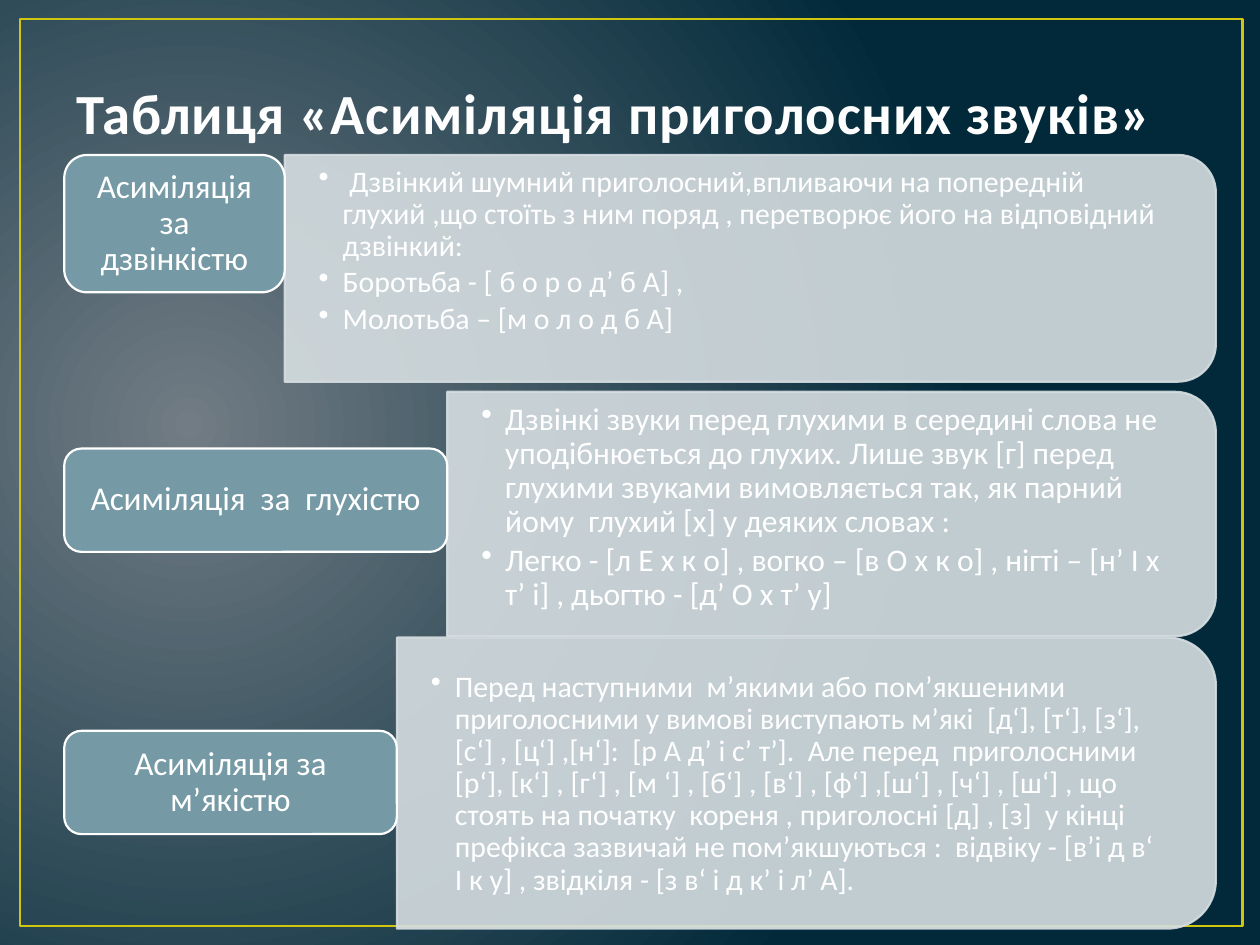
from dataclasses import dataclass

from lxml import etree
from pptx import Presentation
from pptx.dml.color import RGBColor
from pptx.enum.shapes import MSO_SHAPE
from pptx.enum.text import MSO_ANCHOR, PP_ALIGN
from pptx.oxml.ns import qn
from pptx.util import Inches, Pt

RECTANGLE = MSO_SHAPE.RECTANGLE
ROUNDED = MSO_SHAPE.ROUNDED_RECTANGLE
ROUND_TOP = MSO_SHAPE.ROUND_2_SAME_RECTANGLE
TOP, MIDDLE, BOTTOM = MSO_ANCHOR.TOP, MSO_ANCHOR.MIDDLE, MSO_ANCHOR.BOTTOM
LEFT, CENTER = PP_ALIGN.LEFT, PP_ALIGN.CENTER


@dataclass(frozen=True)
class Theme:
    font: str = "Calibri"
    glow: str = "717C84"
    night: str = "01293A"
    frame: str = "CFC60D"
    title: str = "FEFEFE"
    panel: str = "D6DEE1"
    label: str = "759AA5"
    white: str = "FFFFFF"
    title_size: float = 32.4
    label_size: float = 19
    panel_opacity: int = 90


THEME = Theme()


def write_text(shape, paragraphs, *, size, color, bold=False, align=LEFT, anchor=MIDDLE,
               margins=(0.1, 0.05), line_spacing=1, bullet=False, tracking=0):
    """Fill a shape with paragraphs; margins are (sides, top and bottom) in inches."""
    frame = shape.text_frame
    frame.word_wrap = True
    frame.vertical_anchor = anchor
    frame.margin_left = frame.margin_right = Inches(margins[0])
    frame.margin_top = frame.margin_bottom = Inches(margins[1])
    for index, text in enumerate(paragraphs):
        paragraph = frame.add_paragraph() if index else frame.paragraphs[0]
        paragraph.alignment = align
        paragraph.line_spacing = line_spacing
        paragraph.space_before = Pt(0)
        if bullet:
            paragraph.space_after = Pt(round(size * 0.15, 2))
            properties = paragraph._p.get_or_add_pPr()
            properties.set("marL", str(Inches(0.19)))
            properties.set("indent", str(-Inches(0.19)))
            etree.SubElement(properties, qn("a:buChar"), char="•")
        run = paragraph.add_run()
        run.text = text
        run.font.name = THEME.font
        run.font.size = Pt(size)
        run.font.bold = bold
        run.font.color.rgb = RGBColor.from_string(color)
        if tracking:
            run._r.get_or_add_rPr().set("spc", str(int(tracking * 100)))


def add_box(kind, left, top, width, height, *, fill=None, line, line_width=1.25, opacity=100):
    """Add a preset shape placed in inches."""
    shape = slide.shapes.add_shape(kind, Inches(left), Inches(top), Inches(width), Inches(height))
    shape.shadow.inherit = False
    shape.line.color.rgb = RGBColor.from_string(line)
    shape.line.width = Pt(line_width)
    if fill:
        shape.fill.solid()
        shape.fill.fore_color.rgb = RGBColor.from_string(fill)
    else:
        shape.fill.background()
    if opacity < 100:
        for color in shape._element.spPr.iter(qn("a:srgbClr")):
            etree.SubElement(color, qn("a:alpha"), val=str(opacity * 1000))
    return shape


presentation = Presentation()
presentation.slide_width = Inches(10)
presentation.slide_height = Inches(7.5)
slide = presentation.slides.add_slide(presentation.slide_layouts[5])

# Background: radial gradient with its centre at the left
background = slide.background.fill
background.gradient()
for stop, color in zip(background.gradient_stops, (THEME.glow, THEME.night)):
    stop.color.rgb = RGBColor.from_string(color)
for position, stop in enumerate(background.gradient_stops):
    stop.position = position
gradient = slide._element.find(".//" + qn("a:gradFill"))
gradient.remove(gradient.find(qn("a:lin")))
radial = etree.SubElement(gradient, qn("a:path"), path="circle")
etree.SubElement(radial, qn("a:fillToRect"), l="15000", t="50000", r="85000", b="60000")

# Frame
add_box(RECTANGLE, 0.16, 0.15, 9.7, 7.2, line=THEME.frame, line_width=1.5)

# Title
title = slide.shapes.title
title.left, title.top, title.width, title.height = (
    Inches(value) for value in (0.51, -0.04, 9, 1.25))
write_text(title, ["Таблиця «Асиміляція приголосних звуків»"], size=THEME.title_size,
           color=THEME.title, bold=True, anchor=BOTTOM, tracking=0.5)

# Rows: label (text, top, height), panel (left, top, height), text top, text size, points
ROWS = [
    (("Асиміляція за дзвінкістю", 1.23, 1.09), (2.26, 1.23, 1.8), 1.32, 17, [
        " Дзвінкий шумний приголосний,впливаючи на попередній глухий ,що стоїть з ним "
        "поряд , перетворює його на відповідний дзвінкий:",
        "Боротьба - [ б о р о д’ б А] ,",
        "Молотьба – [м о л о д б А]",
    ]),
    (("Асиміляція  за  глухістю", 3.56, 0.82), (3.55, 3.11, 1.94), 3.2, 18, [
        "Дзвінкі звуки перед глухими в середині слова не уподібнюється до глухих. Лише "
        "звук [г] перед глухими звуками вимовляється так, як парний йому  глухий [х] у "
        "деяких словах :",
        "Легко - [л Е х к о] , вогко – [в О х к о] , нігті – [н’ І х т’ і] , "
        "дьогтю - [д’ О х т’ у]",
    ]),
    (("Асиміляція за м’якістю", 5.8, 0.82), (3.15, 5.06, 2.31), 5.33, 17, [
        "Перед наступними  м’якими або пом’якшеними приголосними у вимові виступають "
        "м’які  [д‘], [т‘], [з‘],[с‘] , [ц‘] ,[н‘]:  [р А д’ і с’ т’].  Але перед  "
        "приголосними  [р‘], [к‘] , [г‘] , [м ‘] , [б‘] , [в‘] , [ф‘] ,[ш‘] , [ч‘] , "
        "[ш‘] , що стоять на початку  кореня , приголосні [д] , [з]  у кінці префікса "
        "зазвичай не пом’якшуються :  відвіку - [в’і д в‘ І к у] , "
        "звідкіля - [з в‘ і д к’ і л’ А].",
    ]),
]
LABEL_LEFT, PANEL_RIGHT = 0.51, 9.65

for label, panel, text_top, text_size, points in ROWS:
    label_text, label_top, label_height = label
    panel_left, panel_top, panel_height = panel
    panel_width = PANEL_RIGHT - panel_left

    # Panel: a quarter turn brings its rounded top to the right side
    shift = (panel_width - panel_height) / 2
    panel_shape = add_box(ROUND_TOP, panel_left + shift, panel_top - shift, panel_height,
                          panel_width, fill=THEME.panel, line=THEME.panel,
                          opacity=THEME.panel_opacity)
    panel_shape.rotation = 90

    # Panel text, kept clear of the rounded corners
    text_box = slide.shapes.add_textbox(
        Inches(panel_left), Inches(text_top), Inches(panel_width - panel_height * 0.05),
        Inches(panel_top + panel_height - text_top))
    write_text(text_box, points, size=text_size, color=THEME.white, anchor=TOP,
               margins=(0.27, 0), line_spacing=0.9, bullet=True)

    # Label
    label_shape = add_box(ROUNDED, LABEL_LEFT, label_top, panel_left - LABEL_LEFT,
                          label_height, fill=THEME.label, line=THEME.white)
    write_text(label_shape, [label_text], size=THEME.label_size, color=THEME.white,
               align=CENTER, margins=(0.12, 0.08), line_spacing=0.9)

presentation.save("out.pptx")
